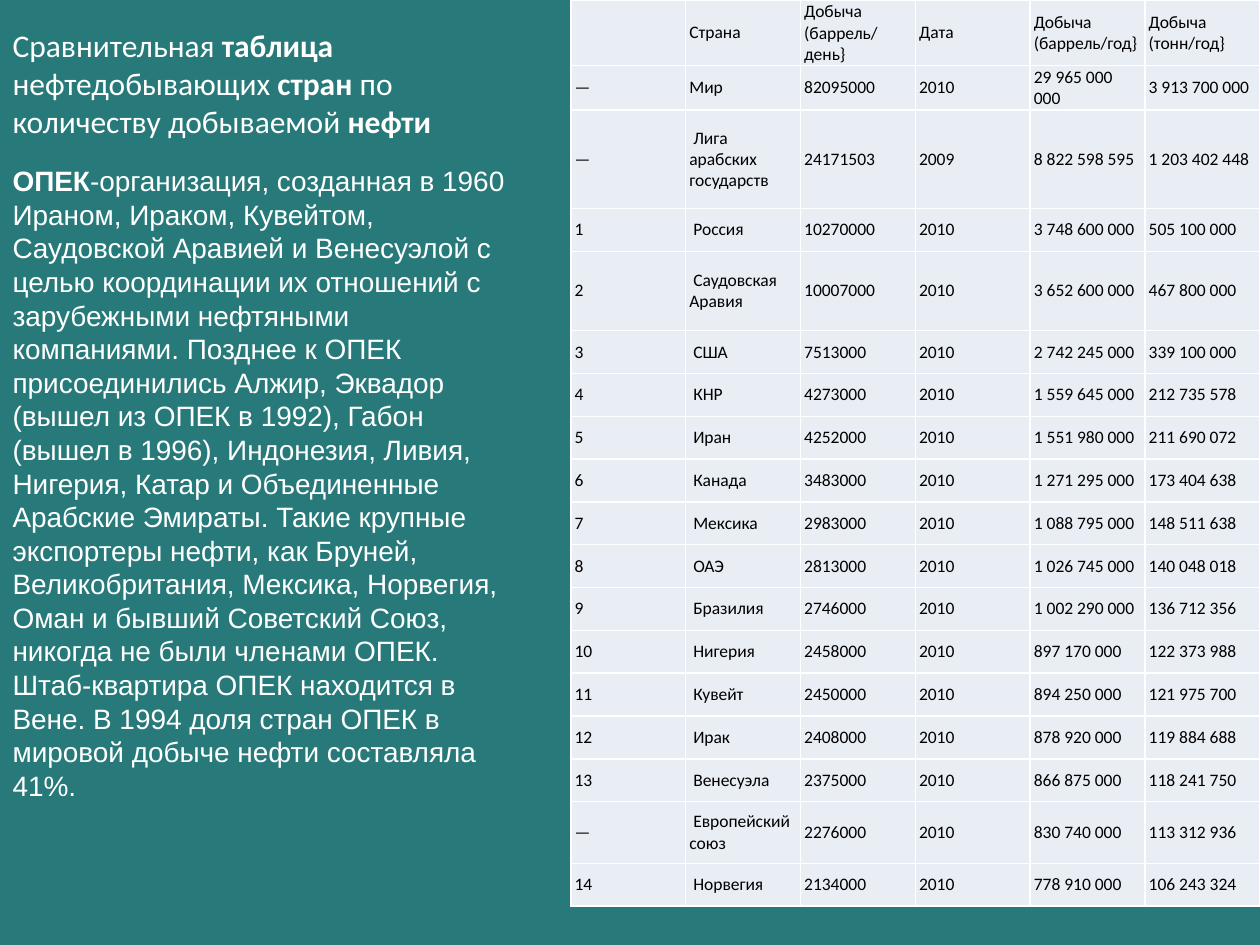
import typing

import pptx
import pptx.dml.color
import pptx.enum.text
import pptx.oxml
import pptx.oxml.ns
import pptx.util
from pptx.util import Inches

TEAL, WHITE, BLACK, PALE = "287A7A", "FFFFFF", "000000", "E9EDF4"
NBSP = chr(160)
LEFT = pptx.enum.text.PP_ALIGN.LEFT
TOP = pptx.enum.text.MSO_ANCHOR.TOP
MIDDLE = pptx.enum.text.MSO_ANCHOR.MIDDLE
GROW = pptx.enum.text.MSO_AUTO_SIZE.SHAPE_TO_FIT_TEXT


class Piece(typing.NamedTuple):
    text: str
    bold: bool = False


class Panel(typing.NamedTuple):
    left: float
    top: float
    width: float
    height: float
    font: str
    size: int
    pieces: list[Piece]


class Row(typing.NamedTuple):
    rank: str
    land: str
    daily: str
    year: str
    annual: str
    tons: str
    height: float = 0.34


TITLE = Panel(0, 0.16, 4.22, 2.22, "Calibri", 18, [
    Piece("Сравнительная "), Piece("таблица", True),
    Piece(" нефтедобывающих "), Piece("стран", True),
    Piece(" по количеству добываемой "), Piece("нефти", True),
])
BODY = Panel(0, 1.25, 4.14, 5.22, "Arial", 16, [
    Piece("ОПЕК", True),
    Piece(
        "-организация, созданная в 1960 Ираном, Ираком, Кувейтом, "
        "Саудовской Аравией и Венесуэлой с целью координации их отношений "
        "с зарубежными нефтяными компаниями. Позднее к ОПЕК присоединились "
        "Алжир, Эквадор (вышел из ОПЕК в 1992), Габон (вышел в 1996), "
        "Индонезия, Ливия, Нигерия, Катар и Объединенные Арабские Эмираты. "
        "Такие крупные экспортеры нефти, как Бруней, Великобритания, "
        "Мексика, Норвегия, Оман и бывший Советский Союз, никогда не были "
        "членами ОПЕК. Штаб-квартира ОПЕК находится в Вене. В 1994 доля "
        "стран ОПЕК в мировой добыче нефти составляла 41%."
    ),
])
ROWS = [
    Row("", "Страна", "Добыча\n(баррель/день}", "Дата",
        "Добыча\n(баррель/год}", "Добыча\n(тонн/год}", 0.49),
    Row("—", "Мир", "82095000", "2010", "29 965 000 000", "3 913 700 000"),
    Row("—", NBSP + "Лига арабских государств", "24171503", "2009",
        "8 822 598 595", "1 203 402 448", 0.78),
    Row("1", NBSP + "Россия", "10270000", "2010", "3 748 600 000", "505 100 000"),
    Row("2", NBSP + "Саудовская Аравия", "10007000", "2010",
        "3 652 600 000", "467 800 000", 0.63),
    Row("3", NBSP + "США", "7513000", "2010", "2 742 245 000", "339 100 000"),
    Row("4", NBSP + "КНР", "4273000", "2010", "1 559 645 000", "212 735 578"),
    Row("5", NBSP + "Иран", "4252000", "2010", "1 551 980 000", "211 690 072"),
    Row("6", NBSP + "Канада", "3483000", "2010", "1 271 295 000", "173 404 638"),
    Row("7", NBSP + "Мексика", "2983000", "2010", "1 088 795 000", "148 511 638"),
    Row("8", NBSP + "ОАЭ", "2813000", "2010", "1 026 745 000", "140 048 018"),
    Row("9", NBSP + "Бразилия", "2746000", "2010", "1 002 290 000", "136 712 356"),
    Row("10", NBSP + "Нигерия", "2458000", "2010", "897 170 000", "122 373 988"),
    Row("11", NBSP + "Кувейт", "2450000", "2010", "894 250 000", "121 975 700"),
    Row("12", NBSP + "Ирак", "2408000", "2010", "878 920 000", "119 884 688"),
    Row("13", NBSP + "Венесуэла", "2375000", "2010", "866 875 000", "118 241 750"),
    Row("—", NBSP + "Европейский союз", "2276000", "2010",
        "830 740 000", "113 312 936", 0.49),
    Row("14", NBSP + "Норвегия", "2134000", "2010", "778 910 000", "106 243 324"),
]
CELL = {
    "vertical_anchor": MIDDLE,
    "margin_left": Inches(0.03), "margin_right": Inches(0.03),
    "margin_top": Inches(0.01), "margin_bottom": Inches(0.01),
}
FRAME = {"word_wrap": True, "vertical_anchor": TOP, "auto_size": GROW}
PARA = {"alignment": LEFT, "line_spacing": 1.0,
        "space_before": pptx.util.Pt(0), "space_after": pptx.util.Pt(0)}


def apply(item: typing.Any, values: dict) -> None:
    for name, value in values.items():
        setattr(item, name, value)


def paint(color: typing.Any, code: str) -> None:
    color.rgb = pptx.dml.color.RGBColor.from_string(code)


def style(font: typing.Any, name: str, size: int, code: str, bold: bool = False) -> None:
    apply(font, {"name": name, "size": pptx.util.Pt(size), "bold": bold})
    paint(font.color, code)


def fill_panel(shape: typing.Any, panel: Panel) -> None:
    apply(shape, {"left": Inches(panel.left), "top": Inches(panel.top),
                  "width": Inches(panel.width), "height": Inches(panel.height)})
    apply(shape.text_frame, FRAME)
    para = shape.text_frame.paragraphs[0]
    apply(para, PARA)
    for piece in panel.pieces:
        run = para.add_run()
        run.text = piece.text
        style(run.font, panel.font, panel.size, WHITE, piece.bold)


def clear_bullet(shape: typing.Any) -> None:
    props = shape.text_frame.paragraphs[0]._p.get_or_add_pPr()
    props.set("marL", "0")
    props.set("indent", "0")
    props.append(pptx.oxml.parse_xml(f"<a:buNone {pptx.oxml.ns.nsdecls('a')}/>"))


def add_edges(cell: typing.Any) -> None:
    props = cell._tc.get_or_add_tcPr()
    for side in "LRTB":
        props.append(pptx.oxml.parse_xml(
            f'<a:ln{side} {pptx.oxml.ns.nsdecls("a")} w="{pptx.util.Pt(1)}">'
            f'<a:solidFill><a:srgbClr val="{WHITE}"/></a:solidFill></a:ln{side}>'))


def fill_cell(cell: typing.Any, text: str) -> None:
    apply(cell, CELL)
    add_edges(cell)
    cell.fill.solid()
    paint(cell.fill.fore_color, PALE)
    para = cell.text_frame.paragraphs[0]
    para.text = text
    style(para.font, "Calibri", 10, BLACK)
    for run in para.runs:
        style(run.font, "Calibri", 10, BLACK)


def add_grid(slide: typing.Any, rows: list[Row]) -> None:
    cols = len(rows[0]) - 1
    width = Inches(5.47)
    height = Inches(sum(row.height for row in rows))
    grid = slide.shapes.add_table(
        len(rows), cols, Inches(4.53), 0, width, height).table
    apply(grid, {"first_row": False, "horz_banding": False})
    for col in grid.columns:
        col.width = width // cols
    for line, row in zip(grid.rows, rows):
        line.height = Inches(row.height)
        for cell, text in zip(line.cells, row[:cols]):
            fill_cell(cell, text)


def main() -> None:
    deck = pptx.Presentation()
    apply(deck, {"slide_width": Inches(10), "slide_height": Inches(7.5)})
    slide = deck.slides.add_slide(deck.slide_layouts[1])
    slide.background.fill.solid()
    paint(slide.background.fill.fore_color, TEAL)
    body = slide.placeholders[1]
    fill_panel(slide.shapes.title, TITLE)
    fill_panel(body, BODY)
    clear_bullet(body)
    add_grid(slide, ROWS)
    deck.save("out.pptx")


if __name__ == "__main__":
    main()
